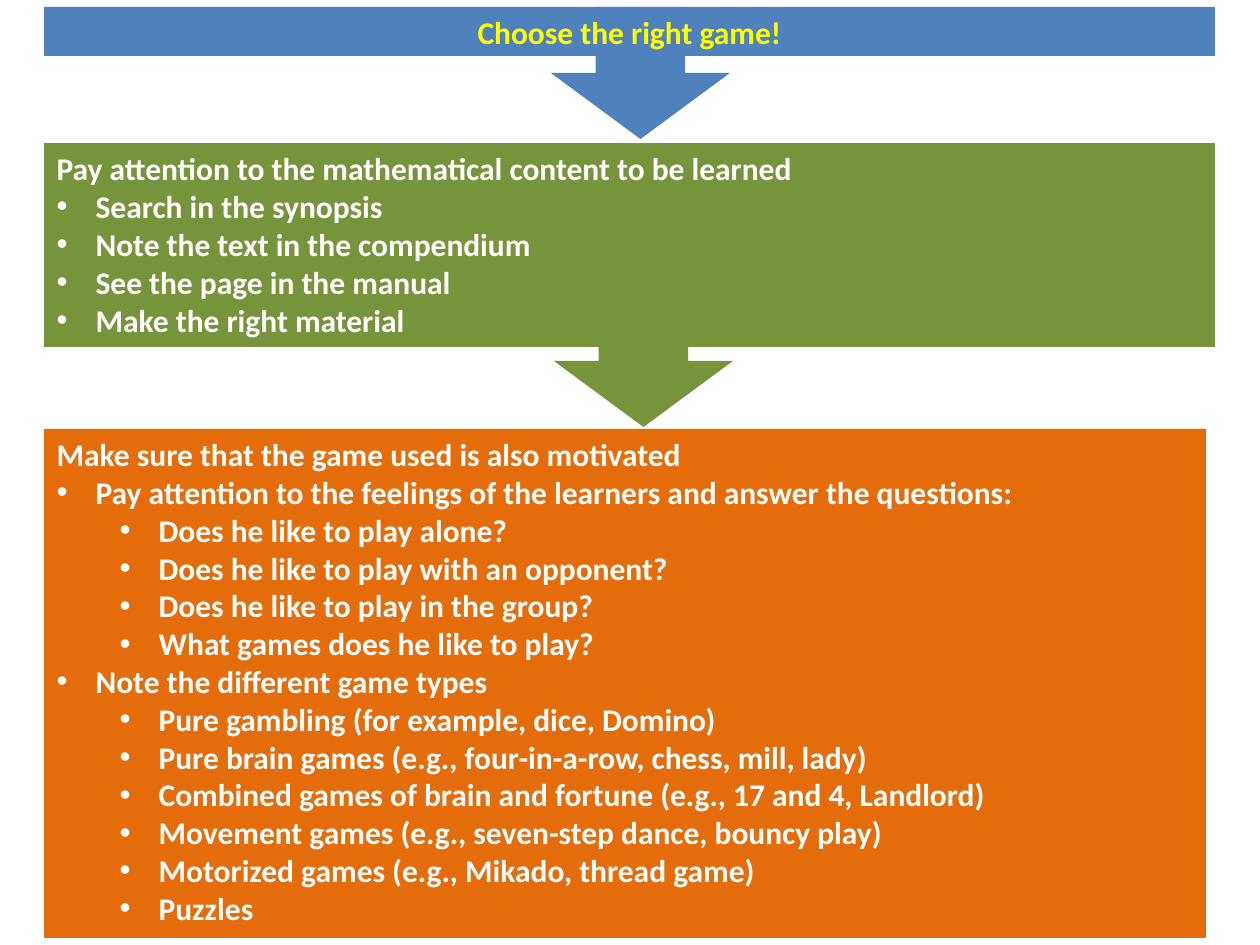
from lxml import etree
from pptx import Presentation
from pptx.dml.color import RGBColor
from pptx.enum.shapes import MSO_SHAPE
from pptx.enum.text import MSO_ANCHOR, MSO_AUTO_SIZE, PP_ALIGN
from pptx.oxml.ns import qn
from pptx.util import Emu, Pt

DOWN_ARROW = MSO_SHAPE.DOWN_ARROW
TOP, MIDDLE = MSO_ANCHOR.TOP, MSO_ANCHOR.MIDDLE
LEFT, CENTER = PP_ALIGN.LEFT, PP_ALIGN.CENTER
NO_AUTOFIT = MSO_AUTO_SIZE.NONE

EMU_PER_PX = 914400 / 126
SLIDE_WIDTH, SLIDE_HEIGHT = 1260, 945
TWO_CONTENT_LAYOUT = 3
HEADING = None  # outline level of a line without a bullet
BULLET_INDENT, LEVEL_STEP = 39, 63

COLORS = {
    "choose": "4F81BD",
    "content": "77933C",
    "motivation": "E46C0A",
    "title": "FFFF00",
    "text": "FFFFFF",
}

CONTENT_LINES = [
    (HEADING, "Pay attention to the mathematical content to be learned"),
    (0, "Search in the synopsis"),
    (0, "Note the text in the compendium"),
    (0, "See the page in the manual"),
    (0, "Make the right material"),
]
MOTIVATION_LINES = [
    (HEADING, "Make sure that the game used is also motivated"),
    (0, "Pay attention to the feelings of the learners and answer the questions:"),
    (1, "Does he like to play alone?"),
    (1, "Does he like to play with an opponent?"),
    (1, "Does he like to play in the group?"),
    (1, "What games does he like to play?"),
    (0, "Note the different game types"),
    (1, "Pure gambling (for example, dice, Domino)"),
    (1, "Pure brain games (e.g., four-in-a-row, chess, mill, lady)"),
    (1, "Combined games of brain and fortune (e.g., 17 and 4, Landlord)"),
    (1, "Movement games (e.g., seven-step dance, bouncy play)"),
    (1, "Motorized games (e.g., Mikado, thread game)"),
    (1, "Puzzles"),
]


def px(length):
    return Emu(round(length * EMU_PER_PX))


def set_bullet(paragraph, level):
    """Indent the paragraph for its level; a heading gets no bullet."""
    properties = paragraph._p.get_or_add_pPr()
    if level is HEADING:
        properties.set("marL", "0")
        properties.set("indent", "0")
        etree.SubElement(properties, qn("a:buNone"))
        return
    paragraph.level = level
    properties.set("marL", str(px(BULLET_INDENT + level * LEVEL_STEP)))
    properties.set("indent", str(px(-BULLET_INDENT)))
    etree.SubElement(properties, qn("a:buFont"), typeface="Arial")
    etree.SubElement(properties, qn("a:buChar"), char="•")


def write_text(paragraph, text, color="text", align=LEFT, level=HEADING,
               size=18, font="Calibri", bold=True):
    set_bullet(paragraph, level)
    paragraph.alignment = align
    paragraph.space_before = Pt(0)
    run = paragraph.add_run()
    run.text = text
    run.font.name = font
    run.font.size = Pt(size)
    run.font.bold = bold
    run.font.color.rgb = RGBColor.from_string(COLORS[color])


class FlowSlide:
    """Holds the current slide and the style of its panels and arrows."""

    arrow_width, arrow_height = 179, 132

    def __init__(self, presentation):
        layout = presentation.slide_layouts[TWO_CONTENT_LAYOUT]
        self.slide = presentation.slides.add_slide(layout)

    def paint(self, shape, color):
        shape.fill.solid()
        shape.fill.fore_color.rgb = RGBColor.from_string(COLORS[color])
        shape.line.fill.background()

    def panel(self, shape, box, color, anchor=TOP):
        """Place and fill a placeholder, and return its text frame."""
        shape.left, shape.top, shape.width, shape.height = map(px, box)
        self.paint(shape, color)
        frame = shape.text_frame
        frame.word_wrap = True
        frame.auto_size = NO_AUTOFIT
        frame.vertical_anchor = anchor
        return frame

    def title(self, text, box, color):
        frame = self.panel(self.slide.shapes.title, box, color, MIDDLE)
        write_text(frame.paragraphs[0], text, color="title", align=CENTER)

    def outline(self, index, lines, box, color):
        frame = self.panel(self.slide.placeholders[index], box, color)
        for number, (level, text) in enumerate(lines):
            paragraph = frame.add_paragraph() if number else frame.paragraphs[0]
            write_text(paragraph, text, level=level)

    def arrow(self, left, top, color):
        box = (left, top, self.arrow_width, self.arrow_height)
        shape = self.slide.shapes.add_shape(DOWN_ARROW, *map(px, box))
        shape.shadow.inherit = False
        self.paint(shape, color)
        return shape

    def send_behind_title(self, shape):
        self.slide.shapes.title._element.addprevious(shape._element)


def main():
    presentation = Presentation()
    presentation.slide_width = px(SLIDE_WIDTH)
    presentation.slide_height = px(SLIDE_HEIGHT)

    flow = FlowSlide(presentation)
    flow.title("Choose the right game!", (44, 7, 1171, 49), "choose")
    flow.outline(1, CONTENT_LINES, (44, 143, 1171, 204), "content")
    flow.outline(2, MOTIVATION_LINES, (44, 429, 1162, 509), "motivation")
    flow.send_behind_title(flow.arrow(551, 7, "choose"))
    flow.arrow(554, 295, "content")

    presentation.save("out.pptx")


if __name__ == "__main__":
    main()
